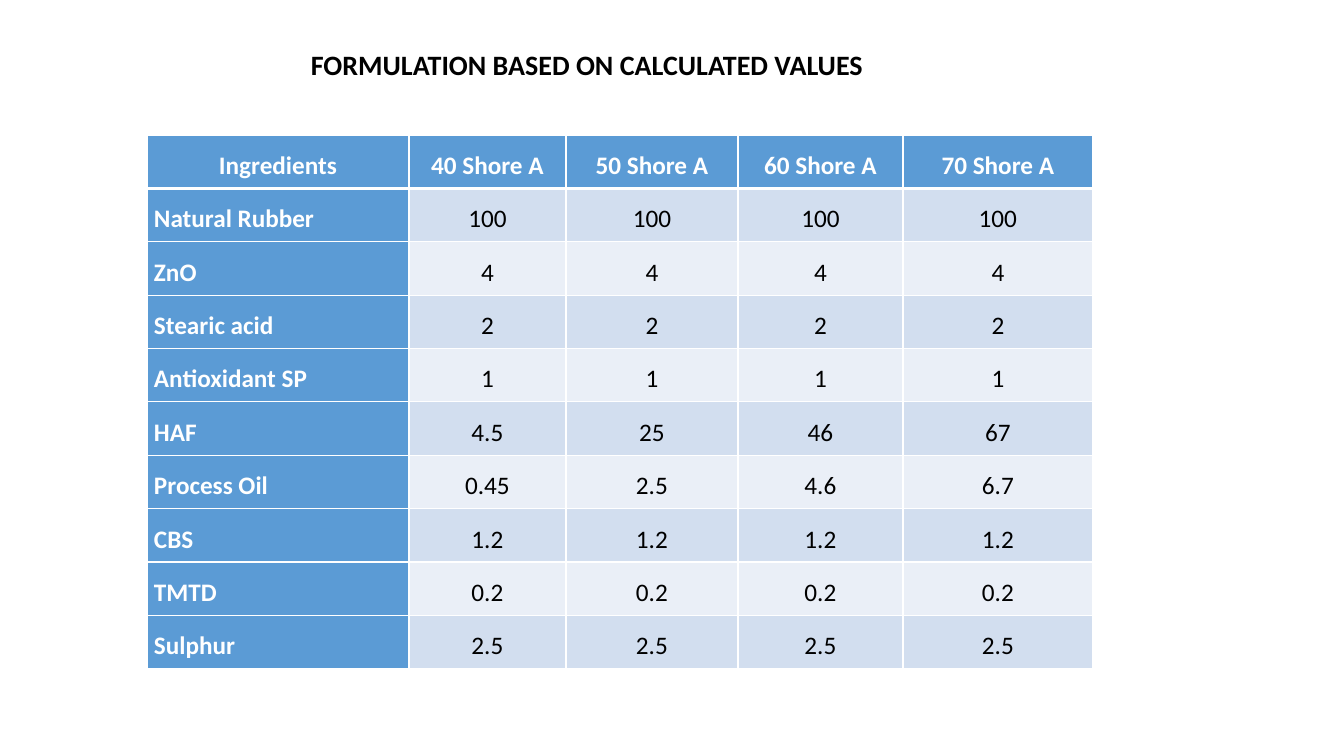
from lxml import etree
from pptx import Presentation
from pptx.dml.color import RGBColor
from pptx.enum.text import MSO_AUTO_SIZE, PP_ALIGN
from pptx.oxml.ns import qn
from pptx.util import Pt

CENTER, JUSTIFY = PP_ALIGN.CENTER, PP_ALIGN.JUSTIFY
FIT_SHAPE = MSO_AUTO_SIZE.SHAPE_TO_FIT_TEXT
EMU_PER_PX = 914400 / 100.8
COLORS = {
    "heading": "5B9BD5",
    "odd_row": "D2DEEF",
    "even_row": "EAEFF7",
    "light": "FFFFFF",
    "dark": "000000",
}
TITLE = "FORMULATION BASED ON CALCULATED VALUES"
FORMULATION = [
    ["Ingredients", "40 Shore A", "50 Shore A", "60 Shore A", "70 Shore A"],
    ["Natural Rubber", "100", "100", "100", "100"],
    ["ZnO", "4", "4", "4", "4"],
    ["Stearic acid", "2", "2", "2", "2"],
    ["Antioxidant SP", "1", "1", "1", "1"],
    ["HAF", "4.5", "25", "46", "67"],
    ["Process Oil", "0.45", "2.5", "4.6", "6.7"],
    ["CBS", "1.2", "1.2", "1.2", "1.2"],
    ["TMTD", "0.2", "0.2", "0.2", "0.2"],
    ["Sulphur", "2.5", "2.5", "2.5", "2.5"],
]
COLUMN_WIDTHS = [262, 157, 172, 165, 190]


def px(length):
    return round(length * EMU_PER_PX)


def rgb(name):
    return RGBColor.from_string(COLORS[name])


class SlideBuilder:
    font = "Calibri"
    line_spacing = 1.5
    cell_margins = {"margin_left": px(7), "margin_right": px(7),
                    "margin_top": 0, "margin_bottom": 0}

    def __init__(self, slide):
        self.slide = slide

    def add_text(self, frame, text, size, color, bold, align=CENTER):
        paragraph = frame.paragraphs[0]
        paragraph.alignment = align
        paragraph.line_spacing = self.line_spacing
        run = paragraph.add_run()
        run.text = text
        font_format = {"name": self.font, "size": Pt(size), "bold": bold}
        for attribute, value in font_format.items():
            setattr(run.font, attribute, value)
        run.font.color.rgb = rgb(color)

    def title(self, text, *box):
        frame = self.slide.shapes.add_textbox(*map(px, box)).text_frame
        frame.word_wrap = True
        frame.auto_size = FIT_SHAPE
        self.add_text(frame, text, 20, "dark", True)

    def borders(self, cell, widths):
        """Draw white cell borders; widths maps each side (L, R, T, B) to points."""
        properties = cell._tc.get_or_add_tcPr()
        for position, (side, width) in enumerate(widths.items()):
            line = etree.Element(qn(f"a:ln{side}"), w=str(Pt(width)))
            fill = etree.SubElement(line, qn("a:solidFill"))
            etree.SubElement(fill, qn("a:srgbClr"), val=COLORS["light"])
            properties.insert(position, line)

    def cell(self, cell, text, row, column):
        is_heading = row == 0 or column == 0
        band = "odd_row" if row % 2 else "even_row"
        for attribute, value in self.cell_margins.items():
            setattr(cell, attribute, value)
        cell.fill.solid()
        cell.fill.fore_color.rgb = rgb("heading" if is_heading else band)
        self.borders(cell, {"L": 1, "R": 1, "T": 3 if row == 1 else 1,
                            "B": 3 if row == 0 else 1})
        self.add_text(cell.text_frame, text, 18, "light" if is_heading else "dark",
                      is_heading, JUSTIFY if row and not column else CENTER)

    def table(self, rows, left, top, widths, height):
        table = self.slide.shapes.add_table(
            len(rows), len(widths), px(left), px(top), px(sum(widths)), px(height)).table
        for column, width in zip(table.columns, widths):
            column.width = px(width)
        for row, texts in enumerate(rows):
            for column, text in enumerate(texts):
                self.cell(table.cell(row, column), text, row, column)


def main():
    deck = Presentation()
    deck.slide_width, deck.slide_height = px(1344), px(756)
    builder = SlideBuilder(deck.slides.add_slide(deck.slide_layouts[6]))
    builder.table(FORMULATION, 147, 135, COLUMN_WIDTHS, 534)
    builder.title(TITLE, 65, 26, 1044, 55)
    deck.save("out.pptx")


if __name__ == "__main__":
    main()
